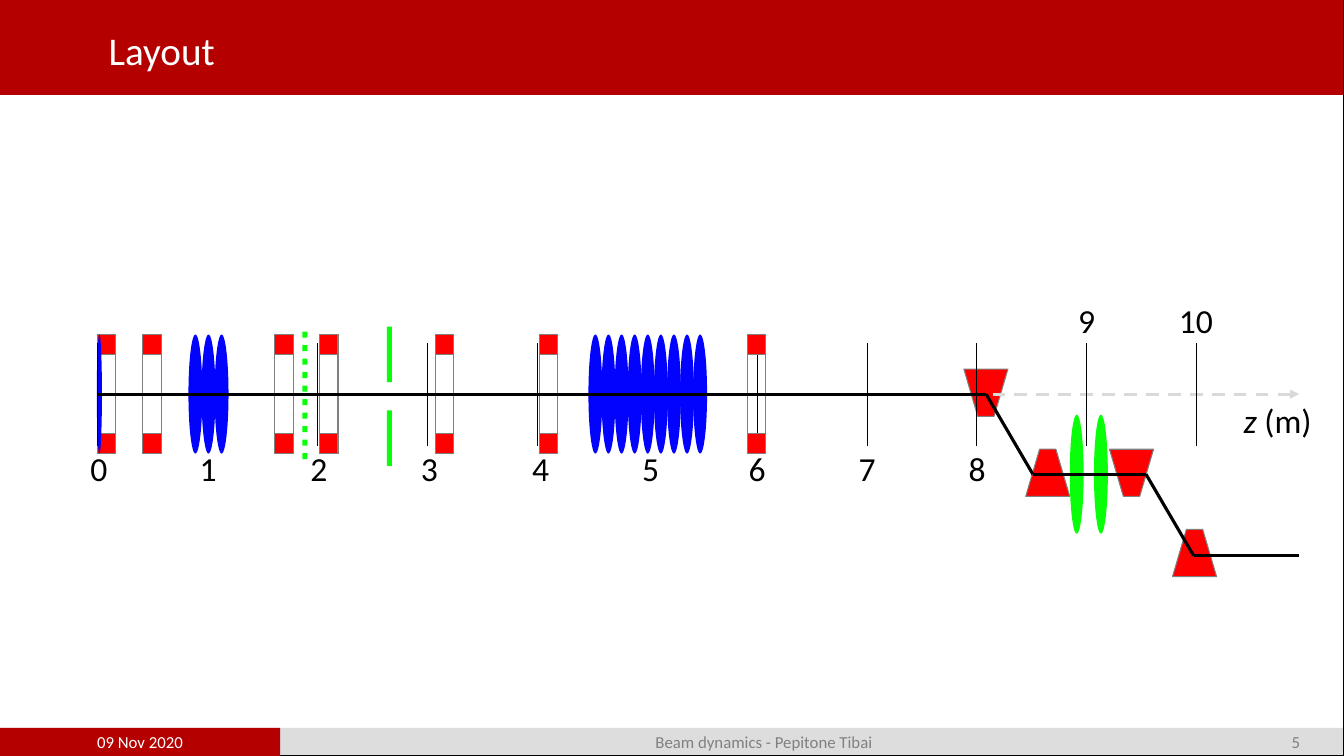
from lxml import etree
from pptx import Presentation
from pptx.dml.color import RGBColor
from pptx.enum.dml import MSO_LINE_DASH_STYLE as Dash
from pptx.enum.shapes import MSO_CONNECTOR, MSO_SHAPE as Kind
from pptx.enum.text import MSO_ANCHOR as Anchor, PP_ALIGN as Align
from pptx.oxml.ns import qn
from pptx.util import Cm, Pt

BLACK = RGBColor(0x00, 0x00, 0x00)
WHITE = RGBColor(0xFF, 0xFF, 0xFF)
CRIMSON = RGBColor(0xB5, 0x00, 0x00)
RED = RGBColor(0xFF, 0x00, 0x00)
BLUE = RGBColor(0x02, 0x02, 0xFF)
GREEN = RGBColor(0x09, 0xFF, 0x09)
GREY = RGBColor(0x80, 0x80, 0x80)
SILVER = RGBColor(0xD9, 0xD9, 0xD9)
PALE = RGBColor(0xDD, 0xDD, 0xDD)

deck = Presentation()
deck.slide_width, deck.slide_height = Cm(33.87), Cm(19.05)
page = deck.slides.add_slide(deck.slide_layouts[6])


def add_figure(kind, left, top, width, height, fill=None, line=None):
    figure = page.shapes.add_shape(kind, Cm(left), Cm(top), Cm(width), Cm(height))
    figure.shadow.inherit = False
    if fill is None:
        figure.fill.background()
    else:
        figure.fill.solid()
        figure.fill.fore_color.rgb = fill
    if line is None:
        figure.line.fill.background()
    else:
        figure.line.color.rgb = line
        figure.line.width = Pt(0.75)
    return figure


def add_line(start, end, color, weight):
    line = page.shapes.add_connector(
        MSO_CONNECTOR.STRAIGHT, Cm(start[0]), Cm(start[1]), Cm(end[0]), Cm(end[1]))
    etree.SubElement(line._element.spPr, qn("a:effectLst"))
    line.line.color.rgb = color
    line.line.width = Pt(weight)
    return line


add_figure(Kind.RECTANGLE, 0, 18.34, 33.87, 0.71, PALE)
add_figure(Kind.RECTANGLE, 0, 0, 33.87, 2.39, CRIMSON)
add_figure(Kind.RECTANGLE, 0, 0, 33.87, 19.05, None, BLACK)
add_figure(Kind.RECTANGLE, 0, 18.34, 7.06, 0.71, CRIMSON)

for text, left, top, width, height, size, color, align in [
    ("Layout", 2.49, 0, 27.1, 2.39, 28, WHITE, Align.LEFT),
    ("09 Nov 2020", 0, 18.34, 7.06, 0.71, 12, WHITE, Align.CENTER),
    ("Beam dynamics - Pepitone Tibai", 7.06, 18.34, 24.39, 0.71, 12, GREY, Align.CENTER),
    ("5", 31.45, 18.34, 2.42, 0.71, 12, GREY, Align.CENTER),
]:
    box = page.shapes.add_textbox(Cm(left), Cm(top), Cm(width), Cm(height))
    frame = box.text_frame
    frame.word_wrap = True
    frame.vertical_anchor = Anchor.MIDDLE
    if size == 28:
        frame.margin_bottom = 0
    para = frame.paragraphs[0]
    para.alignment = align
    span = para.add_run()
    span.text = text
    span.font.name = "Calibri"
    span.font.size = Pt(size)
    span.font.color.rgb = color

for left, top, rotation in [
    (24.29, 9.3, 180), (25.85, 11.32, 0), (27.96, 11.32, 180), (29.55, 13.34, 0),
]:
    dipole = add_figure(Kind.TRAPEZOID, left, top, 1.11, 1.19, RED, GREY)
    dipole.adjustments[0] = 0.315
    dipole.rotation = rotation

AXIS_Y = 9.93
z_axis = add_line((24.46, AXIS_Y), (32.74, AXIS_Y), SILVER, 2.25)
z_axis.line.dash_style = Dash.DASH
etree.SubElement(z_axis.line._get_or_add_ln(), qn("a:tailEnd"), type="triangle")

ORIGIN, METRE = 2.46, 2.77
TICK_TOP, TICK_BOTTOM = 8.64, 11.23
for metre in range(1, 11):
    x = ORIGIN + metre * METRE
    add_line((x, TICK_TOP), (x, TICK_BOTTOM), BLACK, 0.75)

label_lefts = [2.03, 4.78, 7.57, 10.36, 13.16, 15.93, 18.62, 21.39, 24.16, 26.92, 29.46]
labels = [
    ([(str(metre), False)], left, 11.15 if metre < 9 else 7.44, 0.94 if metre < 10 else 1.37)
    for metre, left in enumerate(label_lefts)
]
labels.append(([("z", True), (" (m)", False)], 31.09, 9.96, 2.24))
for parts, left, top, width in labels:
    box = page.shapes.add_textbox(Cm(left), Cm(top), Cm(width), Cm(1.28))
    box.text_frame.word_wrap = False
    para = box.text_frame.paragraphs[0]
    for text, italic in parts:
        span = para.add_run()
        span.text = text
        span.font.name = "Calibri"
        span.font.size = Pt(24)
        span.font.italic = italic
        span.font.color.rgb = BLACK

TOP, HEIGHT = 8.43, 3
for first, cells in [(4.75, 3), (14.83, 9)]:
    for cell in range(cells):
        add_figure(Kind.OVAL, first + cell * 0.33, TOP, 0.35, HEIGHT, BLUE)

for left in [18.84, 13.59, 10.97, 8.06, 6.93, 3.6, ORIGIN]:
    solenoid = add_figure(Kind.RECTANGLE, left, TOP, 0.46, HEIGHT, None, GREY)
    for coil_top in (TOP, TOP + HEIGHT - 0.5):
        add_figure(Kind.RECTANGLE, left, coil_top, 0.46, 0.5, RED, GREY)
add_figure(Kind.OVAL, 2.44, TOP, 0.13, HEIGHT, BLUE)
add_line((ORIGIN, TICK_TOP), (ORIGIN, TICK_BOTTOM), BLACK, 0.75)

for left in (26.96, 27.57):
    add_figure(Kind.OVAL, left, 10.45, 0.35, HEIGHT, GREEN)
for top in (8.23, 10.34):
    add_figure(Kind.RECTANGLE, 9.75, top, 0.13, 1.4, GREEN)
for dash in range(10):
    add_figure(Kind.RECTANGLE, 7.62, 8.36 + dash * 0.34, 0.13, 0.15, GREEN)

beam_points = [
    (ORIGIN, AXIS_Y), (24.85, AXIS_Y), (26.03, 11.95),
    (28.88, 11.95), (30.08, 14), (32.74, 14),
]
for start, end in zip(beam_points, beam_points[1:]):
    beam = add_line(start, end, BLACK, 2.25)
    if start == beam_points[0]:
        beam.begin_connect(solenoid, 1)

deck.save("out.pptx")
